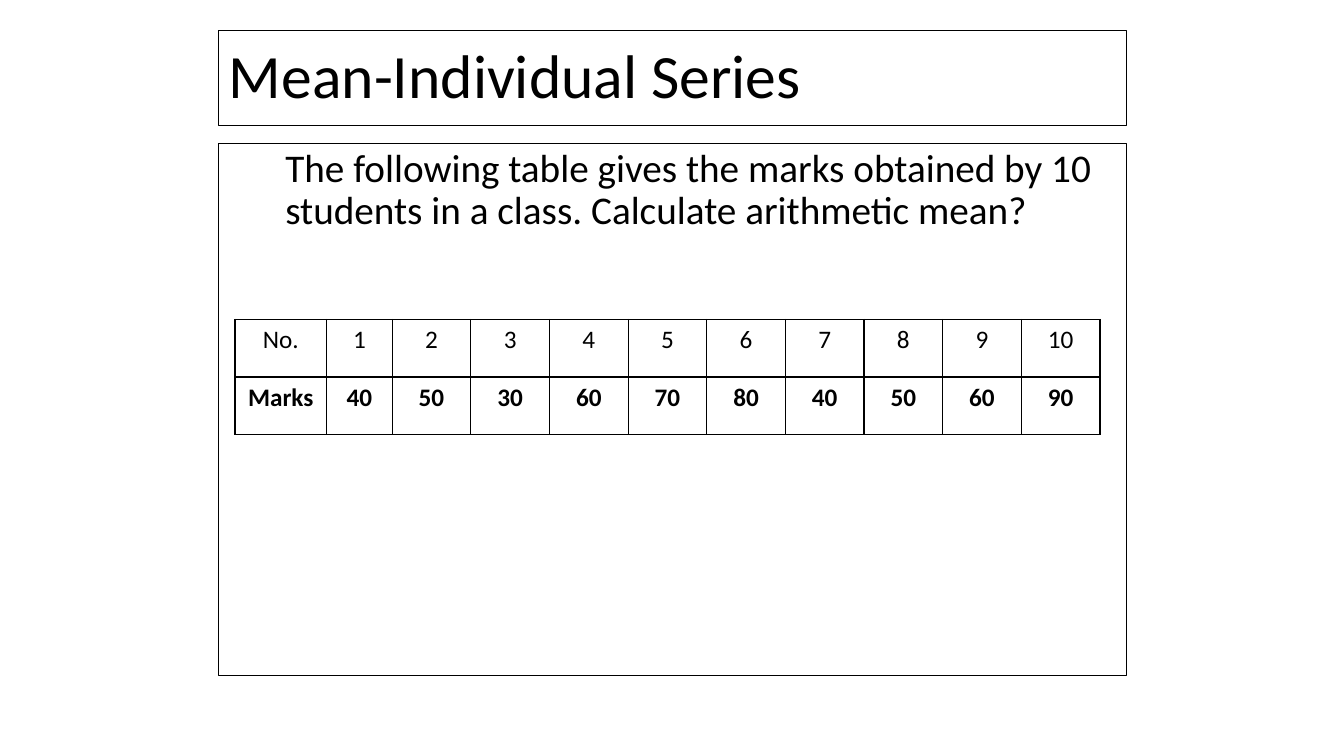
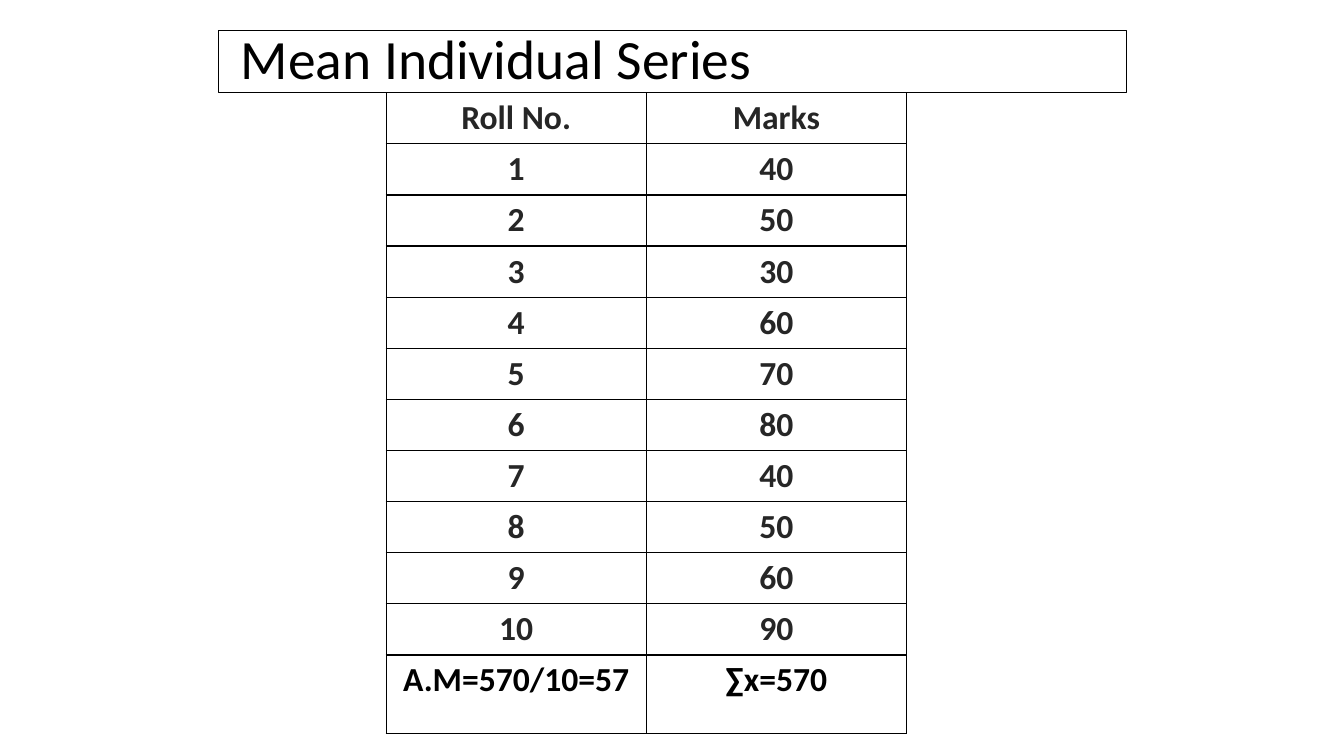
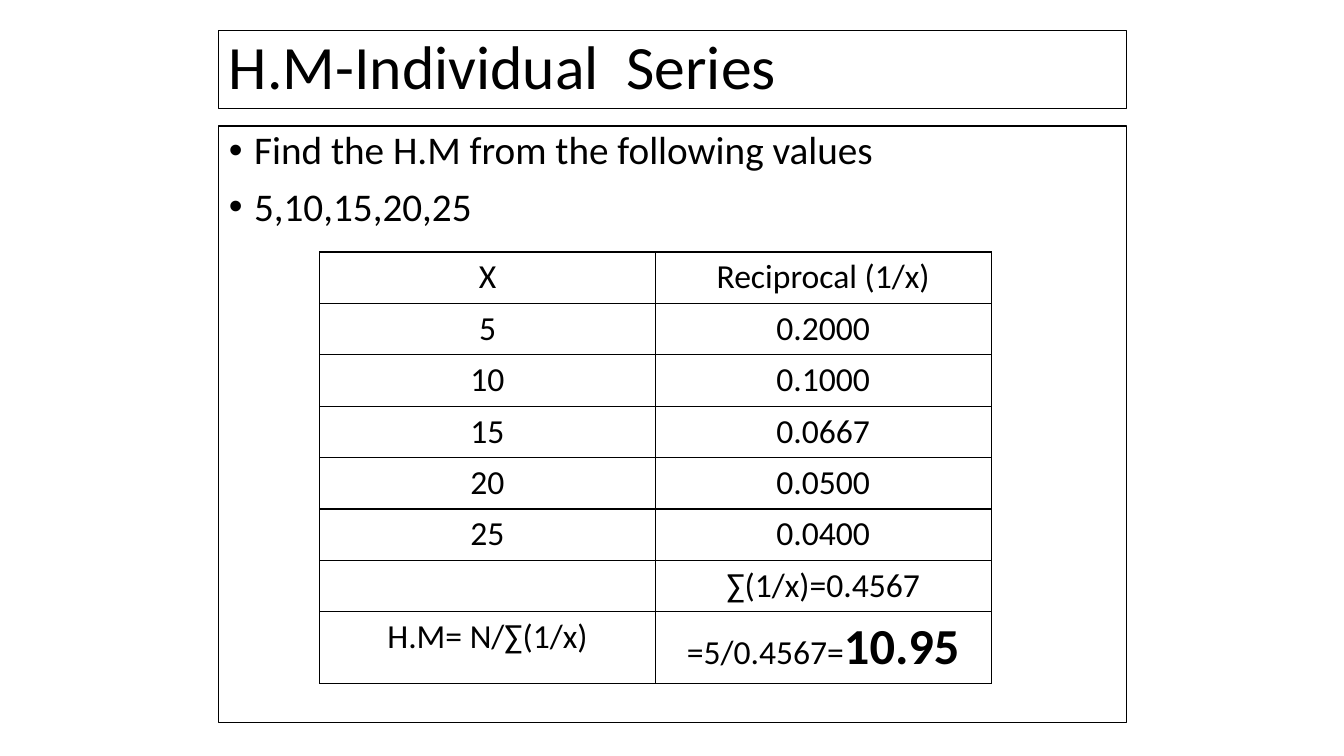
from lxml import etree
from pptx import Presentation
from pptx.dml.color import RGBColor
from pptx.enum.text import MSO_ANCHOR, MSO_AUTO_SIZE, PP_ALIGN
from pptx.oxml.ns import qn
from pptx.util import Pt

LEFT, CENTER = PP_ALIGN.LEFT, PP_ALIGN.CENTER
TOP, MIDDLE = MSO_ANCHOR.TOP, MSO_ANCHOR.MIDDLE
NO_FIT = MSO_AUTO_SIZE.NONE

FONT = "Calibri"
COLORS = {"ink": "000000", "soft": "262626", "paper": "FFFFFF"}
FRAME_X, FRAME_W = 217, 900
TITLE_Y = 30
FULL, TITLED = 1, 5  # layouts: title with body, title only
MARKS = [40, 50, 30, 60, 70, 80, 40, 50, 60, 90]


def px(n):
    """Turn px (100 to the inch) into EMU."""
    return n * 9144


def rgb(name):
    return RGBColor.from_string(COLORS[name])


def add_run(para, text, size, color="ink", bold=False):
    run = para.add_run()
    run.text = text
    font = run.font
    font.name, font.size, font.bold = FONT, Pt(size), bold
    font.color.rgb = rgb(color)


def set_frame(shape, y, h, anchor):
    """Place an outlined placeholder in the shared column."""
    shape.left, shape.top = px(FRAME_X), px(y)
    shape.width, shape.height = px(FRAME_W), px(h)
    shape.line.color.rgb = rgb("ink")
    shape.line.width = Pt(0.75)
    frame = shape.text_frame
    frame.auto_size = NO_FIT
    frame.vertical_anchor = anchor
    return frame


def set_para(para, margin, hang, before):
    para.alignment = LEFT
    para.line_spacing = 0.9
    para.space_before = Pt(before)
    props = para._p.get_or_add_pPr()
    props.set("marL", str(px(margin)))
    props.set("indent", str(px(-hang)))
    return props


def add_slide(deck, layout, title, h, size=44, margin=0):
    slide = deck.slides.add_slide(deck.slide_layouts[layout])
    para = set_frame(slide.shapes.title, TITLE_Y, h, MIDDLE).paragraphs[0]
    set_para(para, margin, 0, 0)
    add_run(para, title, size)
    return slide


def fill_body(slide, y, h, lines, margin, bullet=True):
    frame = set_frame(slide.placeholders[1], y, h, TOP)
    for i, line in enumerate(lines):
        para = frame.add_paragraph() if i else frame.paragraphs[0]
        props = set_para(para, margin, margin if bullet else 0, 10)
        if not bullet:
            etree.SubElement(props, qn("a:buNone"))
        add_run(para, line, 28)


def add_borders(cell):
    props = cell._tc.get_or_add_tcPr()
    for side in ("L", "R", "T", "B"):
        line = etree.SubElement(props, qn("a:ln" + side), w=str(Pt(1)))
        fill = etree.SubElement(line, qn("a:solidFill"))
        etree.SubElement(fill, qn("a:srgbClr"), val=COLORS["ink"])


def add_grid(slide, x, y, cols, heights, rows):
    """Add a table; each cell is a list of (text, style) runs."""
    shape = slide.shapes.add_table(len(rows), len(cols), px(x), px(y),
                                   px(sum(cols)), px(sum(heights)))
    table = shape.table
    table.first_row = table.horz_banding = False
    for col, w in zip(table.columns, cols):
        col.width = px(w)
    for row, h, cells in zip(table.rows, heights, rows):
        row.height = px(h)
        for cell, runs in zip(row.cells, cells):
            add_borders(cell)
            cell.fill.solid()
            cell.fill.fore_color.rgb = rgb("paper")
            para = cell.text_frame.paragraphs[0]
            para.alignment = CENTER
            for text, style in runs:
                add_run(para, text, **style)


def styled(values, **style):
    """Make one row of single-run cells."""
    return [[(str(v), style)] if v != "" else [] for v in values]


def add_task(deck):
    slide = add_slide(deck, FULL, "Mean-Individual Series", 95)
    fill_body(slide, 142, 528, [
        "The following table gives the marks obtained by 10 "
        "students in a class. Calculate arithmetic mean?"], 56, False)
    nums = range(1, len(MARKS) + 1)
    add_grid(slide, 233, 317, [91, 65] + [78] * 9, [57] * 2, [
        styled(["No.", *nums], size=18),
        styled(["Marks", *MARKS], size=18, bold=True)])


def add_mean(deck):
    slide = add_slide(deck, TITLED, "Mean Individual Series", 62, 39.6, 12)
    pairs = [("Roll No.", "Marks"), *enumerate(MARKS, 1)]
    rows = [styled(p, size=24, color="soft", bold=True) for p in pairs]
    rows.append(styled(["A.M=570/10=57", "∑x=570"], size=24, bold=True))
    add_grid(slide, 383, 92, [258] * 2, [50] * 11 + [78], rows)


def add_harmonic(deck):
    slide = add_slide(deck, FULL, "H.M-Individual  Series", 78)
    fill_body(slide, 125, 592, ["Find the H.M from the following values",
                                "5,10,15,20,25"], 25)
    values = [5, 10, 15, 20, 25]
    pairs = [("X", "Reciprocal (1/x)"),
             *((v, f"{1 / v:.4f}") for v in values),
             ("", "∑(1/x)=0.4567"),
             ("H.M= N/∑(1/x)", "=5/0.4567=")]
    rows = [styled(p, size=24) for p in pairs]
    rows[-1][-1].append(("10.95", {"size": 36, "bold": True}))
    add_grid(slide, 317, 250, [333] * 2, [51] * 7 + [70], rows)


def main():
    deck = Presentation()
    deck.slide_width, deck.slide_height = px(1333), px(750)
    add_task(deck)
    add_mean(deck)
    add_harmonic(deck)
    deck.save("out.pptx")


if __name__ == "__main__":
    main()
